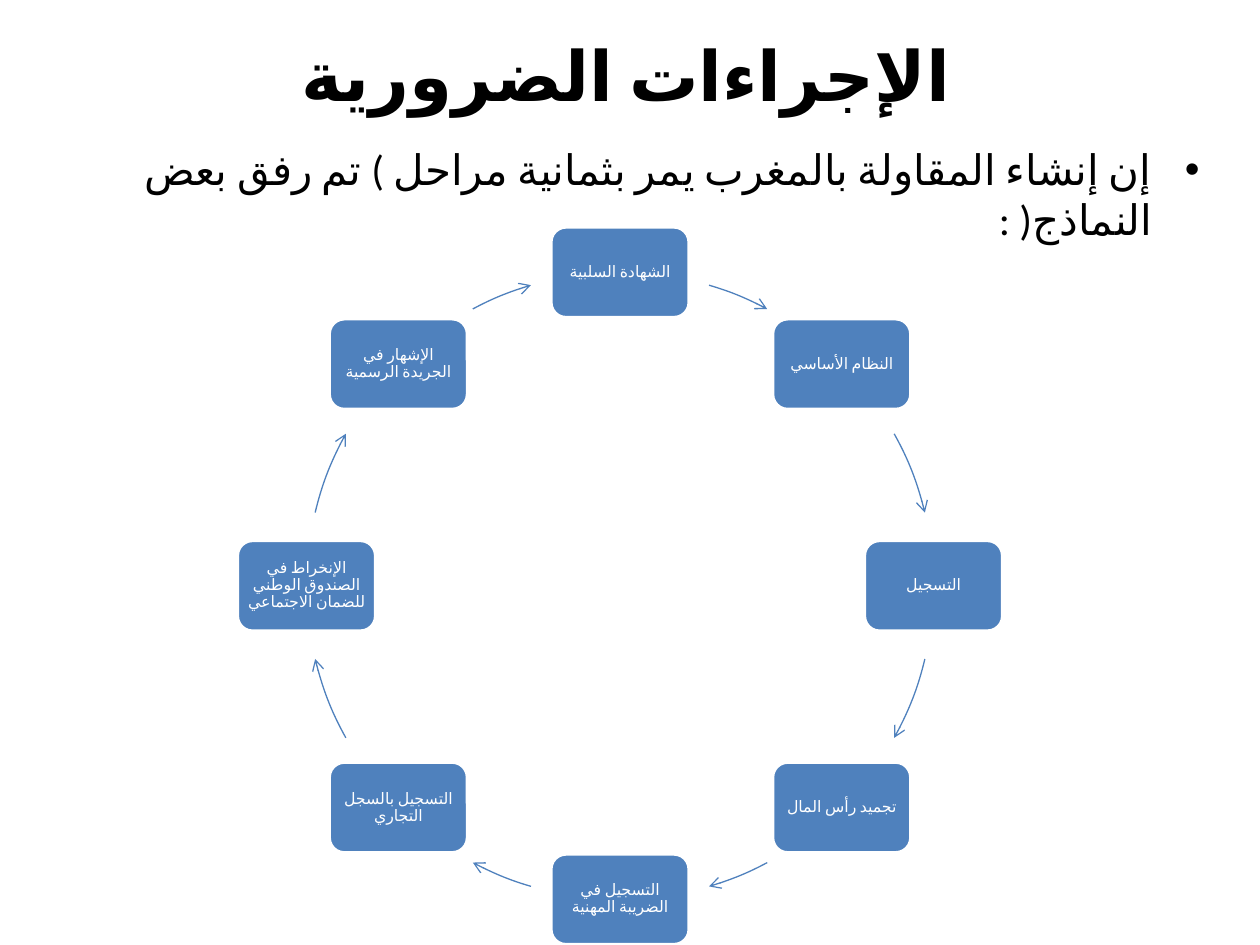
from math import cos, radians, sin

from lxml import etree
from pptx import Presentation
from pptx.dml.color import RGBColor
from pptx.enum.lang import MSO_LANGUAGE_ID
from pptx.enum.shapes import MSO_SHAPE
from pptx.enum.text import MSO_ANCHOR, PP_ALIGN
from pptx.oxml.ns import qn
from pptx.util import Cm, Pt

ROUNDED, ARC = MSO_SHAPE.ROUNDED_RECTANGLE, MSO_SHAPE.ARC
MIDDLE, TOP = MSO_ANCHOR.MIDDLE, MSO_ANCHOR.TOP
CENTER, RIGHT = PP_ALIGN.CENTER, PP_ALIGN.RIGHT
ARABIC = MSO_LANGUAGE_ID.ARABIC_MOROCCO

TITLE = "الإجراءات الضرورية"
INTRO = "إن إنشاء المقاولة بالمغرب يمر بثمانية مراحل ) تم رفق بعض النماذج( :"
STEPS = [
    "الشهادة السلبية",
    "النظام الأساسي",
    "التسجيل",
    "تجميد رأس المال",
    "التسجيل في الضريبة المهنية",
    "التسجيل بالسجل التجاري",
    "الإنخراط في الصندوق الوطني للضمان الاجتماعي",
    "الإشهار في الجريدة الرسمية",
]
COLORS = {"text": "000000", "step": "4F81BD", "light": "FFFFFF"}
FONT = "Calibri"

# Cycle geometry in cm; angles run clockwise from the top, in degrees
CENTER_X, CENTER_Y, RADIUS = 12.5, 11.81, 6.32
STEP_WIDTH, STEP_HEIGHT = 2.79, 1.83
# Arrow spans of a half turn; the other half repeats them
ARROW_SPANS = [(16.5, 28), (61, 76.5), (103.5, 119), (152, 163.5)]


def rgb(name):
    return RGBColor.from_string(COLORS[name])


def write(shape, text, size, color, align=CENTER, anchor=MIDDLE):
    frame = shape.text_frame
    frame.word_wrap = True
    frame.vertical_anchor = anchor
    paragraph = frame.paragraphs[0]
    paragraph.text = text
    paragraph.alignment = align
    paragraph.font.name = FONT
    paragraph.font.size = Pt(size)
    paragraph.font.color.rgb = rgb(color)
    # Arabic letters take the complex-script font and the run's language
    latin = paragraph.font._element.find(qn("a:latin"))
    latin.addnext(etree.Element(qn("a:cs"), typeface=FONT))
    paragraph.runs[0].font.language_id = ARABIC
    return paragraph


def add_title(slide):
    box = slide.shapes.add_textbox(Cm(1.19), Cm(0.58), Cm(22.86), Cm(1.83))
    write(box, TITLE, 39.6, "text").font.bold = True


def add_intro(slide):
    box = slide.shapes.add_textbox(Cm(1.57), Cm(2.77), Cm(22.86), Cm(1.5))
    paragraph = write(box, INTRO, 24, "text", RIGHT, TOP)
    paragraph.space_before = Pt(4.8)
    properties = paragraph.font._element.getparent()
    properties.set("rtl", "1")
    properties.set("marL", str(Cm(0.95)))
    properties.set("indent", str(Cm(-0.95)))
    bullet_font = etree.Element(qn("a:buFont"), typeface="Arial")
    bullet = etree.Element(qn("a:buChar"), char="•")
    for part in (bullet_font, bullet):
        properties.find(qn("a:defRPr")).addprevious(part)


def add_step(slide, text, angle):
    left = CENTER_X + RADIUS * sin(radians(angle)) - STEP_WIDTH / 2
    top = CENTER_Y - RADIUS * cos(radians(angle)) - STEP_HEIGHT / 2
    step = slide.shapes.add_shape(
        ROUNDED, Cm(left), Cm(top), Cm(STEP_WIDTH), Cm(STEP_HEIGHT))
    step.shadow.inherit = False
    step.fill.solid()
    step.fill.fore_color.rgb = rgb("step")
    step.line.color.rgb = rgb("light")
    step.line.width = Pt(2)
    frame = step.text_frame
    frame.margin_left = frame.margin_right = Cm(0.1)
    frame.margin_top = frame.margin_bottom = Cm(0.1)
    write(step, text, 9, "light").line_spacing = 0.9


def add_arrow(slide, start, end):
    arrow = slide.shapes.add_shape(
        ARC, Cm(CENTER_X - RADIUS), Cm(CENTER_Y - RADIUS),
        Cm(2 * RADIUS), Cm(2 * RADIUS))
    # Arc angles count from the right, in 60000ths of a degree;
    # an adjustment of 1 stands for 100000
    for index, angle in enumerate((start, end)):
        arrow.adjustments[index] = (angle - 90) % 360 * 0.6
    arrow.shadow.inherit = False
    arrow.fill.background()
    arrow.line.color.rgb = rgb("step")
    arrow.line.width = Pt(0.75)
    line = arrow.line._get_or_add_ln()
    etree.SubElement(line, qn("a:tailEnd"), type="arrow")


def main():
    deck = Presentation()
    deck.slide_width, deck.slide_height = Cm(25.4), Cm(19.05)
    slide = deck.slides.add_slide(deck.slide_layouts[6])
    add_title(slide)
    add_intro(slide)
    for index, text in enumerate(STEPS):
        add_step(slide, text, index * 360 / len(STEPS))
        half, span = divmod(index, len(ARROW_SPANS))
        start, end = ARROW_SPANS[span]
        add_arrow(slide, start + 180 * half, end + 180 * half)
    deck.save("out.pptx")


if __name__ == "__main__":
    main()
